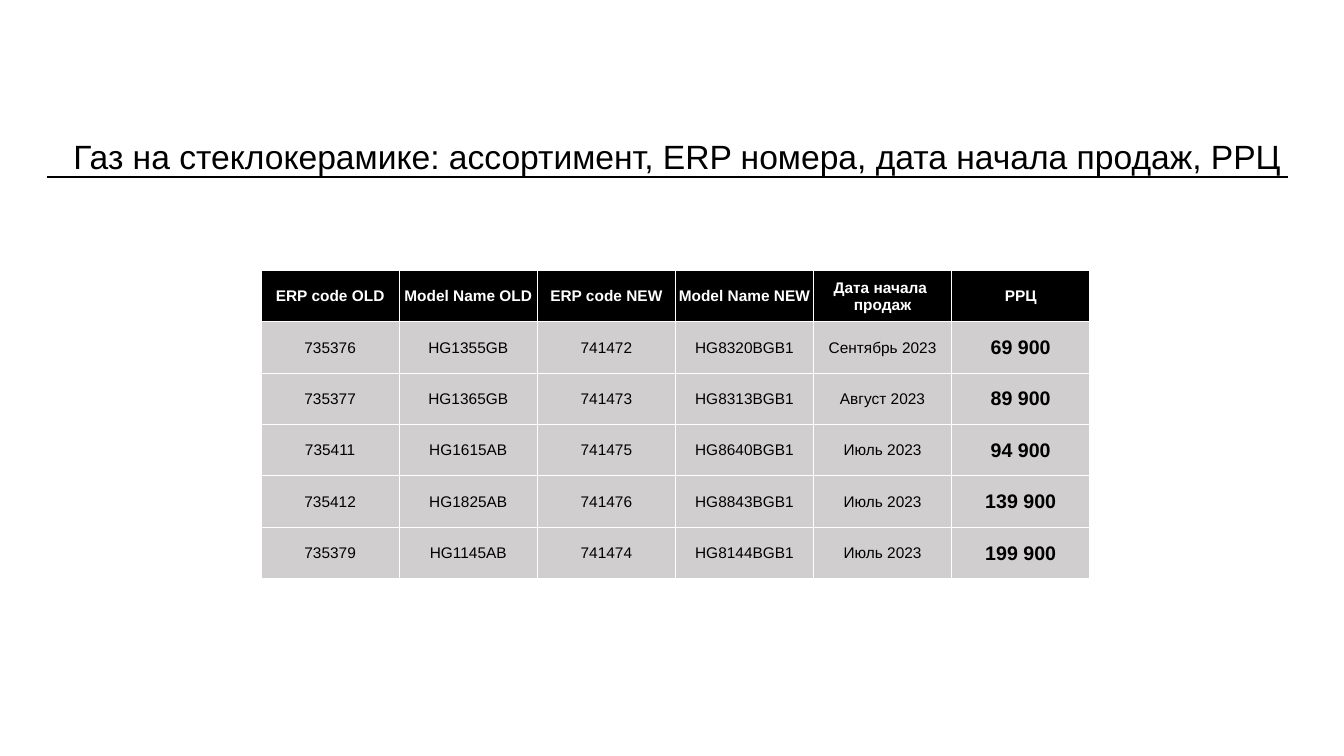
from lxml import etree
from pptx import Presentation
from pptx.dml.color import RGBColor
from pptx.enum.shapes import MSO_CONNECTOR
from pptx.enum.text import MSO_ANCHOR, PP_ALIGN
from pptx.oxml.ns import qn
from pptx.util import Inches, Pt

STRAIGHT = MSO_CONNECTOR.STRAIGHT
MIDDLE, BOTTOM = MSO_ANCHOR.MIDDLE, MSO_ANCHOR.BOTTOM
CENTER = PP_ALIGN.CENTER

FONT = "Arial"
BLACK, WHITE, GREY = "000000", "FFFFFF", "D0CECE"
COL_WIDTH, ROW_HEIGHT = 1.37, 0.51

TITLE = "Газ на стеклокерамике: ассортимент, ERP номера, дата начала продаж, РРЦ"
HEADER = ["ERP code OLD", "Model Name OLD", "ERP code NEW", "Model Name NEW",
          "Дата начала \nпродаж", "РРЦ"]
MODELS = [
    ["735376", "HG1355GB", "741472", "HG8320BGB1", "Сентябрь 2023", "69 900"],
    ["735377", "HG1365GB", "741473", "HG8313BGB1", "Август 2023", "89 900"],
    ["735411", "HG1615AB", "741475", "HG8640BGB1", "Июль 2023", "94 900"],
    ["735412", "HG1825AB", "741476", "HG8843BGB1", "Июль 2023", "139 900"],
    ["735379", "HG1145AB", "741474", "HG8144BGB1", "Июль 2023", "199 900"],
]


def rgb(color):
    return RGBColor.from_string(color)


def add_run(p, text, size, color, bold=False):
    r = p.add_run()
    r.text = text
    r.font.name = FONT
    r.font.size = Pt(size)
    r.font.bold = bold
    r.font.color.rgb = rgb(color)


def add_title(s, text):
    sp = s.shapes.add_textbox(Inches(0.63), Inches(0.5), Inches(12.36), Inches(1.3))
    tf = sp.text_frame
    tf.word_wrap = True
    tf.vertical_anchor = BOTTOM
    p = tf.paragraphs[0]
    p.line_spacing = 0.9
    add_run(p, text, 24, BLACK)


def add_rule(s, left, right, y):
    line = s.shapes.add_connector(STRAIGHT, Inches(left), Inches(y), Inches(right), Inches(y))
    line.line.color.rgb = rgb(BLACK)
    line.line.width = Pt(1.5)
    etree.SubElement(line._element.spPr, qn("a:effectLst"))


def set_borders(cell, color, width):
    """Put the same line on all four sides; borders must precede the fill."""
    tc_pr = cell._tc.get_or_add_tcPr()
    for i, side in enumerate(("lnL", "lnR", "lnT", "lnB")):
        ln = etree.Element(qn(f"a:{side}"), w=str(Pt(width)))
        fill = etree.SubElement(ln, qn("a:solidFill"))
        etree.SubElement(fill, qn("a:srgbClr"), val=color)
        tc_pr.insert(i, ln)


def fill_cell(cell, text, size, color, bold, fill):
    cell.fill.solid()
    cell.fill.fore_color.rgb = rgb(fill)
    set_borders(cell, WHITE, 0.5)
    cell.vertical_anchor = MIDDLE
    cell.margin_left = cell.margin_right = cell.margin_top = Inches(0.01)
    cell.margin_bottom = 0
    tf = cell.text_frame
    for i, line in enumerate(text.split("\n")):
        p = tf.add_paragraph() if i else tf.paragraphs[0]
        p.alignment = CENTER
        add_run(p, line, size, color, bold)


def add_price_table(s, left, top):
    rows, cols = len(MODELS) + 1, len(HEADER)
    table = s.shapes.add_table(rows, cols, Inches(left), Inches(top),
                               Inches(cols * COL_WIDTH), Inches(rows * ROW_HEIGHT)).table
    for col in table.columns:
        col.width = Inches(COL_WIDTH)
    for row in table.rows:
        row.height = Inches(ROW_HEIGHT)
    for c, text in enumerate(HEADER):
        fill_cell(table.cell(0, c), text, 11, WHITE, True, BLACK)
    for r, model in enumerate(MODELS, 1):
        for c, text in enumerate(model):
            is_price = c == cols - 1
            fill_cell(table.cell(r, c), text, 14 if is_price else 11, BLACK, is_price, GREY)


def main():
    prs = Presentation()
    prs.slide_width, prs.slide_height = Inches(13.33), Inches(7.5)
    s = prs.slides.add_slide(prs.slide_layouts[6])
    add_rule(s, 0.47, 12.77, 1.76)
    add_price_table(s, 2.59, 2.68)
    add_title(s, TITLE)
    prs.save("out.pptx")


if __name__ == "__main__":
    main()
